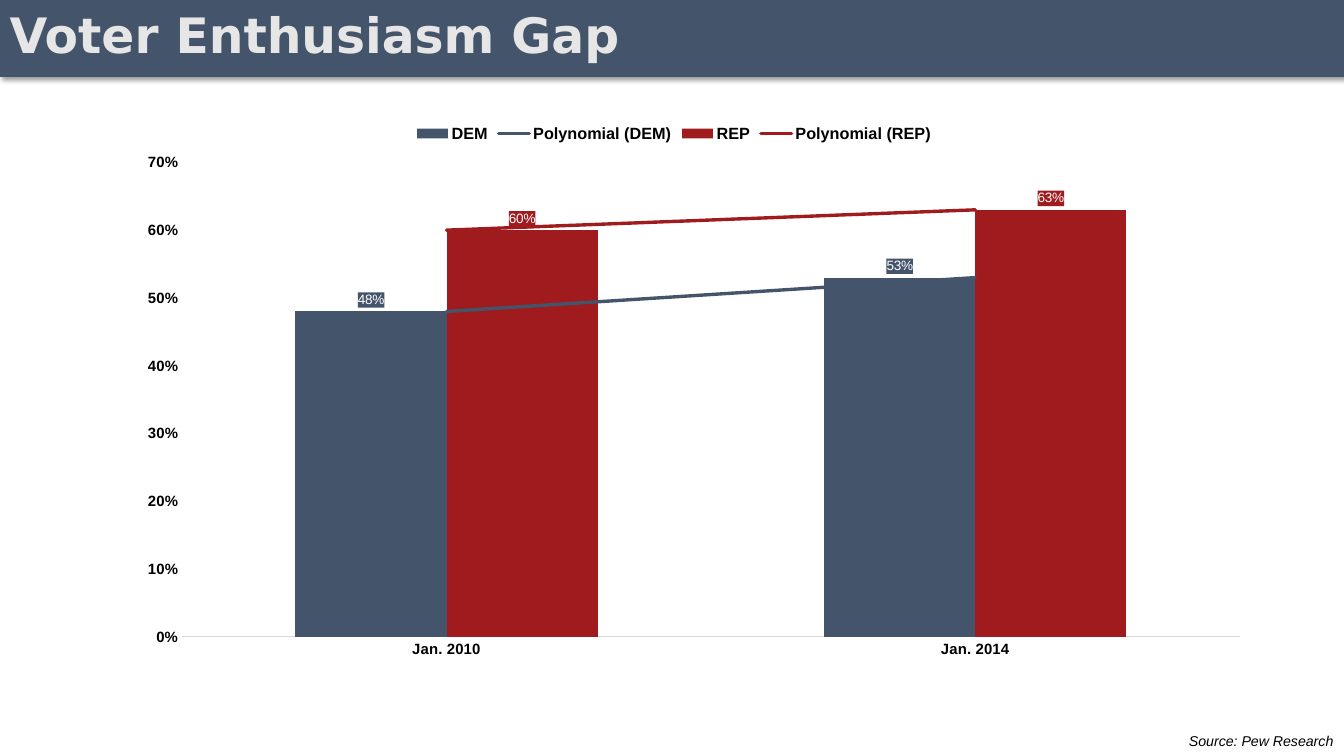
import pptx
import pptx.chart.data
import pptx.dml.color
import pptx.enum.chart
import pptx.enum.shapes
import pptx.enum.text
import pptx.oxml
import pptx.oxml.ns
import pptx.util
from pptx.util import Cm

COLORS = {
    "slate": "44546A",
    "red": "9F1B1E",
    "title": "E7E6E6",
    "axis": "D9D9D9",
    "black": "000000",
    "white": "FFFFFF",
}
SLIDE_WIDTH, SLIDE_HEIGHT = Cm(35), Cm(19.69)
BANNER_HEIGHT = Cm(1.98)
PERIODS = ["Jan. 2010", "Jan. 2014"]
PARTIES = [("DEM", (0.48, 0.53), "slate"), ("REP", (0.6, 0.63), "red")]
PLOT_LAYOUT = {"x": 0.079, "y": 0.087, "w": 0.905, "h": 0.852}
HIDDEN_LEGEND_ENTRIES = (2, 3)


def rgb(name):
    return pptx.dml.color.RGBColor.from_string(COLORS[name])


def xml_element(tag, content):
    namespaces = pptx.oxml.ns.nsdecls("c", "a")
    return pptx.oxml.parse_xml(f"<{tag} {namespaces}>{content}</{tag}>")


def format_font(font, color="black", **values):
    values = {"name": "Arial", **values}
    for attribute, value in values.items():
        setattr(font, attribute, value)
    font.color.rgb = rgb(color)


def add_banner(slide):
    banner = slide.shapes.add_shape(
        pptx.enum.shapes.MSO_SHAPE.RECTANGLE, 0, 0, SLIDE_WIDTH, BANNER_HEIGHT)
    banner.fill.solid()
    banner.fill.fore_color.rgb = rgb("slate")
    banner.line.color.rgb = rgb("slate")
    banner.line.width = pptx.util.Pt(1)
    # Soft shadow below the banner
    banner._element.spPr.append(xml_element("a:effectLst", (
        '<a:outerShdw blurRad="50800" dist="38100" dir="2700000" algn="tl" rotWithShape="0">'
        f'<a:srgbClr val="{COLORS["black"]}"><a:alpha val="40000"/></a:srgbClr>'
        "</a:outerShdw>")))


def add_text(slide, text, box, anchor, alignment, line_spacing=1.0, **font_values):
    shape = slide.shapes.add_textbox(*box)
    frame = shape.text_frame
    frame.word_wrap = True
    frame.vertical_anchor = anchor
    paragraph = frame.paragraphs[0]
    paragraph.text = text
    paragraph.alignment = alignment
    paragraph.line_spacing = line_spacing
    format_font(paragraph.runs[0].font, **font_values)


def format_axes(chart):
    for axis in (chart.category_axis, chart.value_axis):
        axis.has_major_gridlines = False
        axis.major_tick_mark = pptx.enum.chart.XL_TICK_MARK.NONE
        axis.minor_tick_mark = pptx.enum.chart.XL_TICK_MARK.NONE
        format_font(axis.tick_labels.font, size=pptx.util.Pt(11), bold=True)
    category_line = chart.category_axis.format.line
    category_line.color.rgb = rgb("axis")
    category_line.width = pptx.util.Pt(0.75)
    value_axis = chart.value_axis
    value_axis.format.line.fill.background()
    scale = {"minimum_scale": 0, "maximum_scale": 0.7, "major_unit": 0.1}
    for attribute, value in scale.items():
        setattr(value_axis, attribute, value)
    value_axis.tick_labels.number_format = "0%"
    value_axis.tick_labels.number_format_is_linked = False


def format_series(series, color):
    series.format.fill.solid()
    series.format.fill.fore_color.rgb = rgb(color)
    solid_fill = f'<a:solidFill><a:srgbClr val="{COLORS[color]}"/></a:solidFill>'

    # Value labels on a box in the party colour
    labels = series.data_labels
    label_values = {
        "show_value": True,
        "number_format": "0%",
        "number_format_is_linked": False,
        "position": pptx.enum.chart.XL_LABEL_POSITION.OUTSIDE_END,
    }
    for attribute, value in label_values.items():
        setattr(labels, attribute, value)
    format_font(labels.font, "white", size=pptx.util.Pt(10), bold=False)
    labels._element.find(pptx.oxml.ns.qn("c:txPr")).addprevious(
        xml_element("c:spPr", solid_fill))

    # Polynomial trend line
    series._element.find(pptx.oxml.ns.qn("c:cat")).addprevious(xml_element("c:trendline", (
        f'<c:spPr><a:ln w="31750" cap="rnd">{solid_fill}</a:ln></c:spPr>'
        '<c:trendlineType val="poly"/><c:order val="2"/>'
        '<c:dispRSqr val="0"/><c:dispEq val="0"/>')))


def format_legend(chart):
    chart.has_legend = True
    legend = chart.legend
    legend.position = pptx.enum.chart.XL_LEGEND_POSITION.TOP
    legend.include_in_layout = False
    format_font(legend.font, size=pptx.util.Pt(12), bold=True)
    position = legend._element.find(pptx.oxml.ns.qn("c:legendPos"))
    for index in reversed(HIDDEN_LEGEND_ENTRIES):
        position.addnext(xml_element(
            "c:legendEntry", f'<c:idx val="{index}"/><c:delete val="1"/>'))


def set_plot_layout(chart):
    plot_area = chart._chartSpace.chart.plotArea
    for layout in plot_area.findall(pptx.oxml.ns.qn("c:layout")):
        plot_area.remove(layout)
    settings = '<c:layoutTarget val="inner"/><c:xMode val="edge"/><c:yMode val="edge"/>'
    settings += "".join(f'<c:{key} val="{value}"/>' for key, value in PLOT_LAYOUT.items())
    plot_area.insert(0, xml_element(
        "c:layout", f"<c:manualLayout>{settings}</c:manualLayout>"))


def add_enthusiasm_chart(slide):
    data = pptx.chart.data.CategoryChartData(number_format="0%")
    data.categories = PERIODS
    for name, values, _ in PARTIES:
        data.add_series(name, values)
    chart = slide.shapes.add_chart(
        pptx.enum.chart.XL_CHART_TYPE.COLUMN_CLUSTERED,
        Cm(2.34), Cm(2.97), Cm(30.43), Cm(14.5), data).chart
    chart.has_title = False
    format_font(chart.font, size=pptx.util.Pt(10))
    plot = chart.plots[0]
    for attribute, value in {"gap_width": 150, "overlap": 0, "vary_by_categories": False}.items():
        setattr(plot, attribute, value)
    format_axes(chart)
    for series, (_, _, color) in zip(plot.series, PARTIES):
        format_series(series, color)
    format_legend(chart)
    set_plot_layout(chart)


def main():
    presentation = pptx.Presentation()
    presentation.slide_width = SLIDE_WIDTH
    presentation.slide_height = SLIDE_HEIGHT
    slide = presentation.slides.add_slide(presentation.slide_layouts[6])
    anchors = pptx.enum.text.MSO_ANCHOR
    alignments = pptx.enum.text.PP_ALIGN

    # Title banner
    add_banner(slide)
    add_text(slide, "Voter Enthusiasm Gap", (0, 0, SLIDE_WIDTH, BANNER_HEIGHT),
             anchors.MIDDLE, alignments.LEFT, 0.9, color="title",
             name="DejaVu Sans", size=pptx.util.Pt(36), bold=True)

    # Chart and its source
    add_enthusiasm_chart(slide)
    add_text(slide, "Source: Pew Research", (Cm(28.58), Cm(18.95), Cm(6.4), Cm(0.74)),
             anchors.TOP, alignments.RIGHT, size=pptx.util.Pt(10.5), italic=True)

    presentation.save("out.pptx")


if __name__ == "__main__":
    main()
